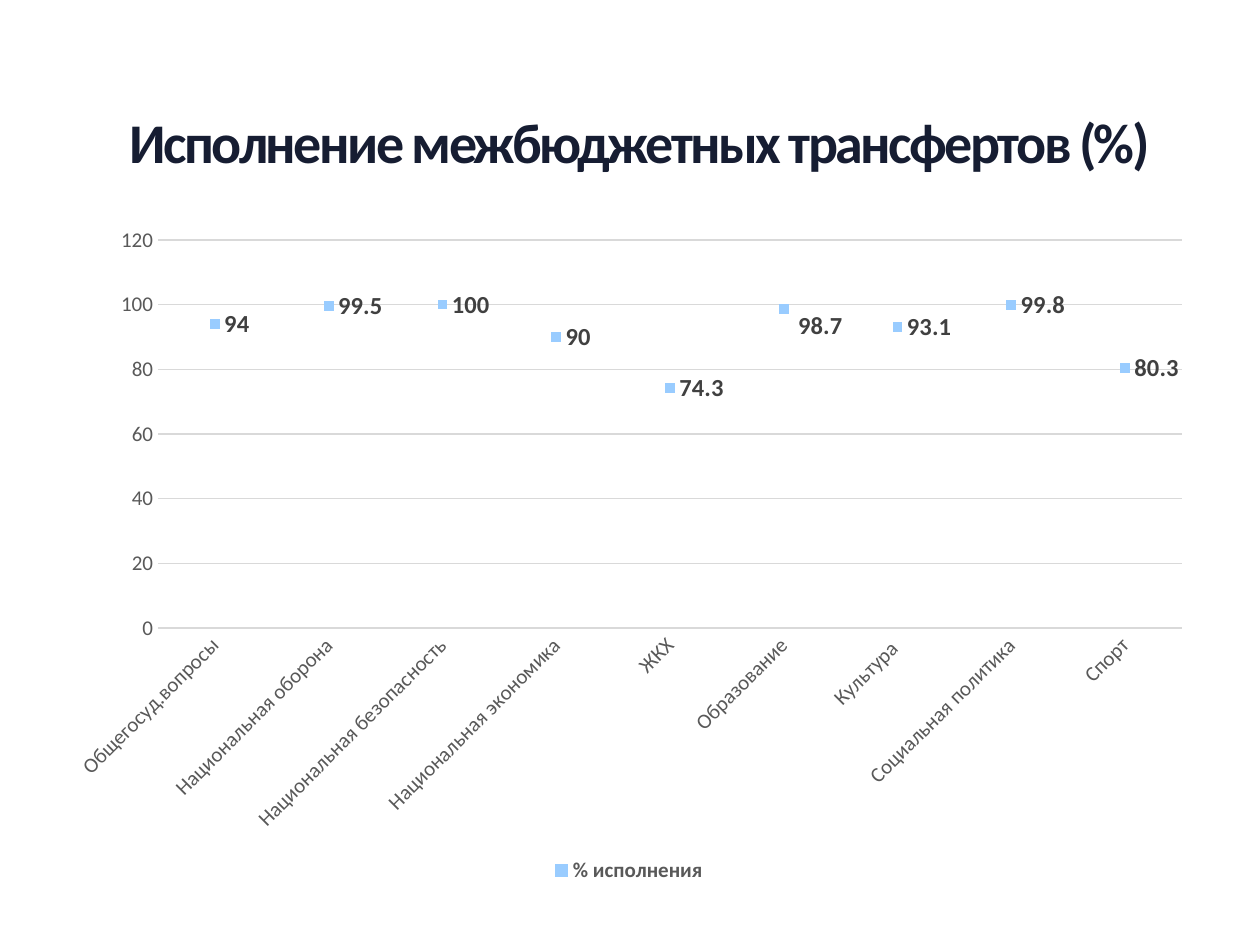
from lxml import etree
from pptx import Presentation
from pptx.chart.data import CategoryChartData
from pptx.dml.color import RGBColor
from pptx.enum.chart import (XL_CHART_TYPE, XL_LABEL_POSITION as POS,
                             XL_LEGEND_POSITION, XL_MARKER_STYLE, XL_TICK_MARK)
from pptx.enum.text import MSO_ANCHOR, PP_ALIGN
from pptx.oxml import parse_xml
from pptx.oxml.ns import qn
from pptx.util import Inches, Pt

PX = Inches(1) / 126
CHART_W, CHART_H = 1150, 674
NAVY = RGBColor(0x16, 0x1D, 0x32)
SKY = RGBColor(0x99, 0xCC, 0xFF)
DARK = RGBColor(0x40, 0x40, 0x40)
GREY = RGBColor(0x59, 0x59, 0x59)
LIGHT = RGBColor(0xD9, 0xD9, 0xD9)
NO_LEADERS = (
    '<c:extLst xmlns:c="http://schemas.openxmlformats.org/drawingml/2006/chart">'
    '<c:ext uri="{CE6537A1-D6FC-4f65-9D91-7224C49458BB}"'
    ' xmlns:c15="http://schemas.microsoft.com/office/drawing/2012/chart">'
    '<c15:showLeaderLines val="0"/></c:ext></c:extLst>')


def box(*lengths):
    return [round(v * PX) for v in lengths]


def style(font, size=12, color=GREY, bold=False):
    font.name = "Calibri"
    font.size = Pt(size)
    font.bold = bold
    font.color.rgb = color


prs = Presentation()
prs.slide_width, prs.slide_height = box(1260, 945)
s = prs.slides.add_slide(prs.slide_layouts[6])

tb = s.shapes.add_textbox(*box(44, 95, 1191, 100))
tf = tb.text_frame
tf.word_wrap = True
tf.vertical_anchor = MSO_ANCHOR.MIDDLE
tf.margin_left = tf.margin_right = tf.margin_top = tf.margin_bottom = 0
p = tf.paragraphs[0]
p.alignment = PP_ALIGN.CENTER
p.line_spacing = 0.9
r = p.add_run()
r.text = "Исполнение межбюджетных трансфертов (%)"
style(r.font, size=32, color=NAVY, bold=True)
r.font._element.set("spc", "-150")

results = {
    "Общегосуд.вопросы": 94,
    "Национальная оборона": 99.5,
    "Национальная безопасность": 100,
    "Национальная экономика": 90,
    "ЖКХ": 74.3,
    "Образование": 98.7,
    "Культура ": 93.1,
    "Социальная политика": 99.8,
    "Спорт": 80.3,
}
data = CategoryChartData()
data.categories = list(results)
data.add_series("% исполнения", list(results.values()))
chart = s.shapes.add_chart(XL_CHART_TYPE.LINE_MARKERS,
                           *box(54, 214, CHART_W, CHART_H), data).chart
style(chart.font, size=10)
chart.has_title = False
chart.has_legend = True
chart.legend.position = XL_LEGEND_POSITION.BOTTOM
chart.legend.include_in_layout = False
style(chart.legend.font, bold=True)

cat, val = chart.category_axis, chart.value_axis
for axis in (cat, val):
    axis.major_tick_mark = axis.minor_tick_mark = XL_TICK_MARK.NONE
    style(axis.tick_labels.font)
val.minimum_scale, val.maximum_scale, val.major_unit = 0, 120, 20
val.has_major_gridlines = True
val.format.line.fill.background()
for line in (cat.format.line, val.major_gridlines.format.line):
    line.color.rgb = LIGHT
    line.width = Pt(0.75)
cat._element.find(qn("c:txPr")).find(qn("a:bodyPr")).set("rot", "-2700000")

plot = chart.plots[0]
plot.vary_by_categories = False
series = plot.series[0]
series.smooth = False
series.format.line.fill.background()
series.marker.style = XL_MARKER_STYLE.SQUARE
series.marker.size = 5
series.marker.format.fill.solid()
series.marker.format.fill.fore_color.rgb = SKY
series.marker.format.line.fill.background()
labels = series.data_labels
labels.show_value = True
labels.position = POS.RIGHT
moved = series.points[5].data_label
moved.position = POS.RIGHT
for font in (labels.font, moved.font):
    style(font, size=14, color=DARK, bold=True)
labels._element.append(parse_xml(NO_LEADERS))

area = chart._chartSpace.chart.plotArea
for old in area.findall(qn("c:layout")):
    area.remove(old)
label = labels._element.find(qn("c:dLbl"))
layouts = [
    (area, 0, dict(layoutTarget="inner", xMode="edge", yMode="edge",
                   x=104 / CHART_W, y=26 / CHART_H,
                   w=1024 / CHART_W, h=388 / CHART_H)),
    (label, 1, dict(x=5 / CHART_W, y=17 / CHART_H)),
]
for parent, index, settings in layouts:
    layout = etree.Element(qn("c:layout"))
    manual = etree.SubElement(layout, qn("c:manualLayout"))
    for name, value in settings.items():
        etree.SubElement(manual, qn("c:" + name)).set("val", str(value))
    parent.insert(index, layout)

prs.save("out.pptx")
